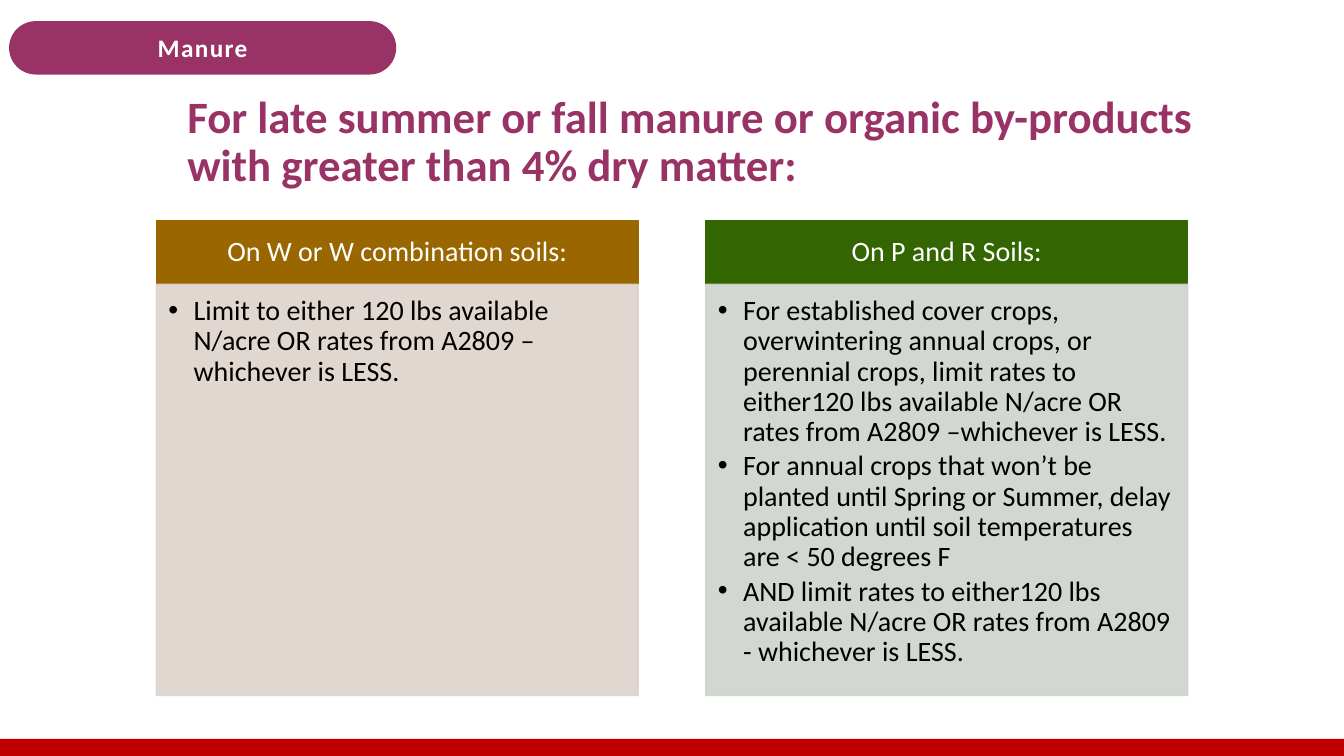
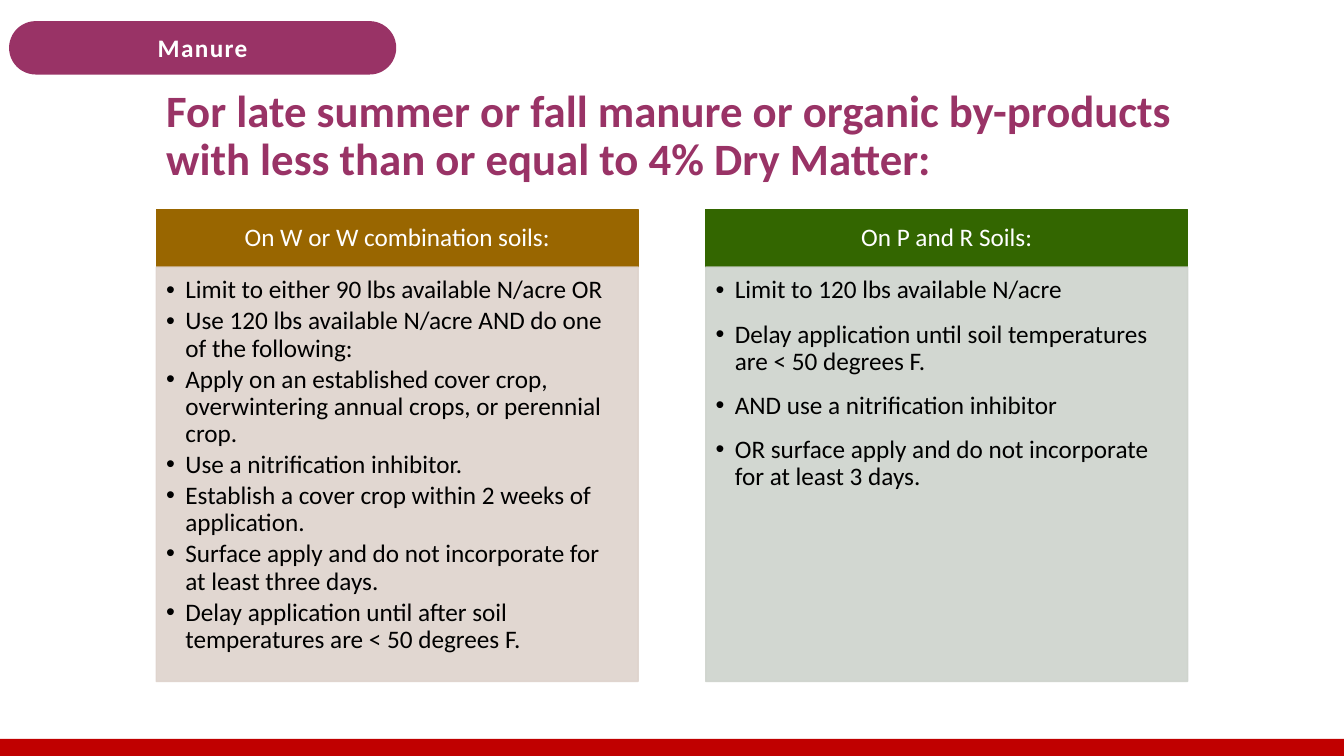
from dataclasses import dataclass

from lxml import etree
from pptx import Presentation
from pptx.dml.color import RGBColor
from pptx.enum import shapes, text
from pptx.oxml import ns
from pptx.util import Inches, Pt

# Shared look
FONT = "Calibri"
PLUM, RED, WHITE, BLACK = "993366", "C00000", "FFFFFF", "000000"
SLIDE_WIDTH, SLIDE_HEIGHT = 13.33, 7.5
BAND_HEIGHT = 0.17
COLUMN_LEFT, COLUMN_WIDTH, COLUMN_GAP = 1.55, 4.78, 0.67
LINE_SPACING = 0.9


@dataclass
class Column:
    heading: str
    header_color: str
    body_color: str
    bullets: list[str]
    space_before: float
    space_after: float


@dataclass
class Page:
    title: str
    title_left: float
    title_top: float
    title_height: float
    size: int
    top: float
    header_height: float
    body_height: float
    indent: float
    columns: list[Column]


def w_soils(bullets: list[str], space_after: float) -> Column:
    return Column("On W or W combination soils:", "996600", "DED3CC", bullets, 0, space_after)


def p_and_r_soils(bullets: list[str], space_before: float, space_after: float) -> Column:
    return Column("On P and R Soils:", "336600", "CED3CC", bullets, space_before, space_after)


PAGES = [
    Page(
        "For late summer or fall manure or organic by-products with greater than 4% dry matter:",
        1.76, 0.89, 1.04, 20, 2.19, 0.63, 4.08, 0.25,
        [
            w_soils([
                "Limit to either 120 lbs available N/acre OR rates from A2809 –whichever is LESS.",
            ], 3),
            p_and_r_soils([
                "For established cover crops, overwintering annual crops, or perennial crops, "
                "limit rates to either120 lbs available N/acre OR rates from A2809 –whichever is LESS.",
                "For annual crops that won’t be planted until Spring or Summer, "
                "delay application until soil temperatures are < 50 degrees F",
                "AND limit rates to either120 lbs available N/acre OR rates from A2809 - whichever is LESS.",
            ], 0, 3),
        ],
    ),
    Page(
        "For late summer or fall manure or organic by-products with less than or equal to 4% Dry Matter:",
        1.55, 0.83, 1.1, 18, 2.08, 0.57, 4.11, 0.19,
        [
            w_soils([
                "Limit to either 90 lbs available N/acre OR",
                "Use 120 lbs available N/acre AND do one of the following:",
                "Apply on an established cover crop, overwintering annual crops, or perennial crop.",
                "Use a nitrification inhibitor.",
                "Establish a cover crop within 2 weeks of application.",
                "Surface apply and do not incorporate for at least three days.",
                "Delay application until after soil temperatures are < 50 degrees F.",
            ], 2.7),
            p_and_r_soils([
                "Limit to 120 lbs available N/acre",
                "Delay application until soil temperatures are < 50 degrees F.",
                "AND use a nitrification inhibitor",
                "OR surface apply and do not incorporate for at least 3 days.",
            ], 6, 6),
        ],
    ),
]


def rgb(color: str) -> RGBColor:
    return RGBColor.from_string(color)


def add_block(slide, kind, left: float, top: float, width: float, height: float,
              color: str, outlined: bool = False, opacity: int = 100):
    shape = slide.shapes.add_shape(kind, Inches(left), Inches(top), Inches(width), Inches(height))
    shape.shadow.inherit = False
    shape.fill.solid()
    shape.fill.fore_color.rgb = rgb(color)
    if outlined:
        shape.line.color.rgb = rgb(color)
        shape.line.width = Pt(1)
    else:
        shape.line.fill.background()
    if opacity < 100:
        for element in shape._element.spPr.iter(ns.qn("a:srgbClr")):
            etree.SubElement(element, ns.qn("a:alpha")).set("val", str(opacity * 1000))
    return shape


def set_frame(shape, anchor, margins: tuple[float, float, float, float]):
    frame = shape.text_frame
    frame.word_wrap = True
    frame.vertical_anchor = anchor
    frame.margin_left, frame.margin_top, frame.margin_right, frame.margin_bottom = map(Inches, margins)
    return frame


def add_run(paragraph, words: str, size: float, color: str, bold: bool = False,
            align=text.PP_ALIGN.LEFT):
    paragraph.alignment = align
    run = paragraph.add_run()
    run.text = words
    run.font.name = FONT
    run.font.size = Pt(size)
    run.font.bold = bold
    run.font.color.rgb = rgb(color)
    return run


def add_bullet(paragraph, indent: float) -> None:
    properties = paragraph._p.get_or_add_pPr()
    properties.set("marL", str(Inches(indent)))
    properties.set("indent", str(-Inches(indent)))
    etree.SubElement(properties, ns.qn("a:buFont")).set("typeface", "Arial")
    etree.SubElement(properties, ns.qn("a:buChar")).set("char", "•")


def draw_frame(slide) -> None:
    # Bottom band and topic label
    add_block(slide, shapes.MSO_SHAPE.RECTANGLE, 0, SLIDE_HEIGHT - BAND_HEIGHT,
              SLIDE_WIDTH, BAND_HEIGHT, RED)
    label = add_block(slide, shapes.MSO_SHAPE.ROUNDED_RECTANGLE, 0.09, 0.21, 3.84, 0.53, PLUM)
    label.adjustments[0] = 0.5
    frame = set_frame(label, text.MSO_ANCHOR.MIDDLE, (0.1, 0.05, 0.1, 0.05))
    run = add_run(frame.paragraphs[0], "Manure", 18, WHITE, True, text.PP_ALIGN.CENTER)
    run._r.get_or_add_rPr().set("spc", "100")


def draw_title(slide, page: Page) -> None:
    box = slide.shapes.add_textbox(Inches(page.title_left), Inches(page.title_top),
                                   Inches(10.23), Inches(page.title_height))
    frame = set_frame(box, text.MSO_ANCHOR.TOP, (0.1, 0.05, 0.1, 0.05))
    paragraph = frame.paragraphs[0]
    paragraph.line_spacing = LINE_SPACING
    add_run(paragraph, page.title, 32, PLUM, True)


def draw_column(slide, page: Page, column: Column, left: float) -> None:
    # Insets grow with the text size
    side, edge, start, bottom = (round(page.size * factor, 2)
                                 for factor in (0.0078, 0.0044, 0.0058, 0.0088))
    # Header
    header = add_block(slide, shapes.MSO_SHAPE.RECTANGLE, left, page.top, COLUMN_WIDTH,
                       page.header_height, column.header_color, outlined=True)
    frame = set_frame(header, text.MSO_ANCHOR.MIDDLE, (side, edge, side, edge))
    paragraph = frame.paragraphs[0]
    paragraph.line_spacing = LINE_SPACING
    add_run(paragraph, column.heading, page.size, WHITE, align=text.PP_ALIGN.CENTER)

    # Bulleted body
    body = add_block(slide, shapes.MSO_SHAPE.RECTANGLE, left, page.top + page.header_height,
                     COLUMN_WIDTH, page.body_height, column.body_color, outlined=True, opacity=90)
    frame = set_frame(body, text.MSO_ANCHOR.TOP, (start, start, side, bottom))
    for index, words in enumerate(column.bullets):
        paragraph = frame.add_paragraph() if index else frame.paragraphs[0]
        add_bullet(paragraph, page.indent)
        paragraph.line_spacing = LINE_SPACING
        paragraph.space_before = Pt(column.space_before if index else 0)
        paragraph.space_after = Pt(column.space_after)
        add_run(paragraph, words, page.size, BLACK)


def main() -> None:
    presentation = Presentation()
    presentation.slide_width = Inches(SLIDE_WIDTH)
    presentation.slide_height = Inches(SLIDE_HEIGHT)
    for page in PAGES:
        slide = presentation.slides.add_slide(presentation.slide_layouts[6])
        draw_frame(slide)
        draw_title(slide, page)
        for index, column in enumerate(page.columns):
            draw_column(slide, page, column, COLUMN_LEFT + index * (COLUMN_WIDTH + COLUMN_GAP))
    presentation.save("out.pptx")


if __name__ == "__main__":
    main()
